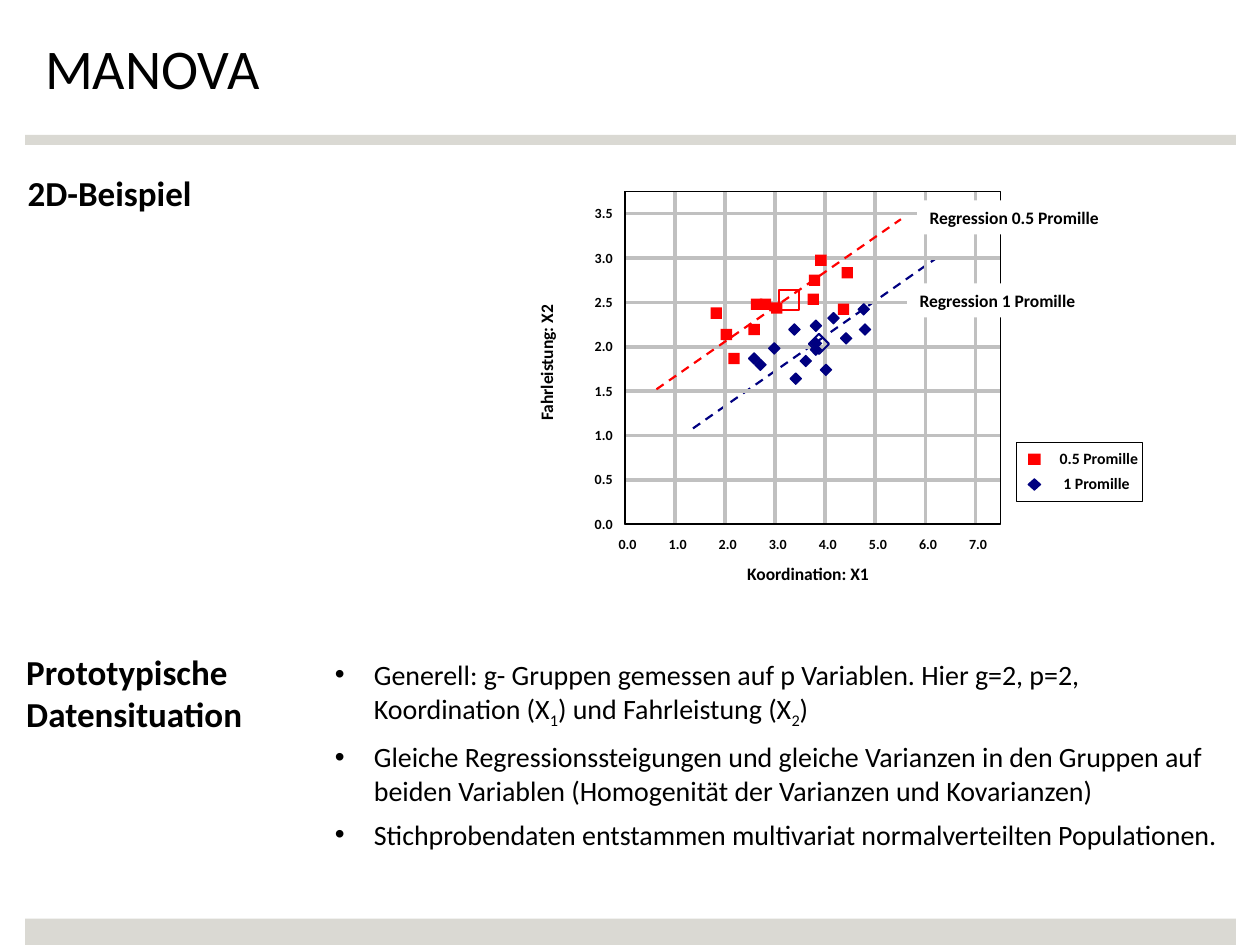
from copy import deepcopy

from lxml import etree
from pptx import Presentation
from pptx.dml.color import RGBColor
from pptx.enum.dml import MSO_LINE
from pptx.enum.shapes import MSO_CONNECTOR, MSO_SHAPE
from pptx.enum.text import PP_ALIGN
from pptx.oxml.ns import qn
from pptx.util import Inches, Pt

FONT = "Calibri"
BLACK = RGBColor(0, 0, 0)
WHITE = RGBColor(255, 255, 255)
BAND = RGBColor(0xDA, 0xD9, 0xD3)
GRID = RGBColor(0xC0, 0xC0, 0xC0)
RED = RGBColor(0xFF, 0, 0)
NAVY = RGBColor(0, 0, 0x80)

DASH = MSO_LINE.DASH
STRAIGHT = MSO_CONNECTOR.STRAIGHT
RECTANGLE = MSO_SHAPE.RECTANGLE
DIAMOND = MSO_SHAPE.DIAMOND
LEFT = PP_ALIGN.LEFT

PLOT_LEFT, PLOT_TOP, PLOT_WIDTH, PLOT_HEIGHT = 4.96, 1.52, 2.98, 2.64
PLOT_RIGHT, PLOT_BOTTOM = PLOT_LEFT + PLOT_WIDTH, PLOT_TOP + PLOT_HEIGHT
X_MAXIMUM, Y_MAXIMUM = 7.5, 3.75
MARKER = 0.09

LIGHT_DOSE = [
    (6.42, 2.18), (5.94, 2.57), (5.72, 2.61), (5.64, 2.44), (6.12, 2.4), (5.96, 2.37),
    (6.03, 2.37), (6.47, 2.02), (6.68, 2.12), (6.41, 2.33), (6.65, 2.41), (5.78, 2.8)]
HEAVY_DOSE = [
    (6.27, 2.96), (6.51, 2.89), (5.99, 2.85), (6.35, 2.82), (6.43, 2.68), (6.82, 2.57), (6.67, 2.64),
    (6.43, 2.54), (6.43, 2.73), (6.81, 2.41), (6.57, 2.48), (6.26, 2.57), (6.1, 2.72), (5.94, 2.8)]

BULLETS = [
    [("Generell: g- Gruppen gemessen auf p Variablen. Hier g=2, p=2,\nKoordination (X", False),
     ("1", True), (") und Fahrleistung (X", False), ("2", True), (")", False)],
    [("Gleiche Regressionssteigungen und gleiche Varianzen in den Gruppen auf beiden Variablen "
      "(Homogenität der Varianzen und Kovarianzen)", False)],
    [("Stichprobendaten entstammen multivariat normalverteilten Populationen.", False)],
]


def write_text(para, text, size, bold=False, subscript=False):
    """Append text to a paragraph, turning newlines into line breaks."""
    for index, line in enumerate(text.split("\n")):
        if index:
            para.add_line_break()
            para._p[-1].append(deepcopy(span._r.rPr))
        span = para.add_run()
        span.text = line
        span.font.name = FONT
        span.font.size = Pt(size)
        span.font.bold = bold
        span.font.color.rgb = BLACK
        if subscript:
            span._r.rPr.set("baseline", "-25000")


def add_text(page, area, text, size, bold=False):
    """Add a wrapping text box with one paragraph."""
    box = page.shapes.add_textbox(*map(Inches, area))
    box.text_frame.word_wrap = True
    write_text(box.text_frame.paragraphs[0], text, size, bold)


def add_plot_label(page, area, text, size, rotation=0):
    """Add a bold single-line label without margins."""
    box = page.shapes.add_textbox(*map(Inches, area))
    box.rotation = rotation
    frame = box.text_frame
    frame.word_wrap = False
    frame.margin_left = frame.margin_right = frame.margin_top = frame.margin_bottom = 0
    write_text(frame.paragraphs[0], text, size, bold=True)


def add_bullets(page, area, items, size):
    """Add a bulleted list whose items are lists of spans."""
    frame = page.shapes.add_textbox(*map(Inches, area)).text_frame
    frame.word_wrap = True
    for index, item in enumerate(items):
        para = frame.add_paragraph() if index else frame.paragraphs[0]
        if index:
            para.space_before = Pt(6)
        properties = para._p.get_or_add_pPr()
        properties.set("marL", str(Inches(0.31)))
        properties.set("indent", str(Inches(-0.31)))
        etree.SubElement(properties, qn("a:buFont")).set("typeface", "Arial")
        etree.SubElement(properties, qn("a:buChar")).set("char", "•")
        for text, subscript in item:
            write_text(para, text, size, subscript=subscript)


def paint(shape, fill=None, line=None, width=0):
    """Set the fill and outline of a shape, None meaning no paint."""
    shape.shadow.inherit = False
    if fill is None:
        shape.fill.background()
    else:
        shape.fill.solid()
        shape.fill.fore_color.rgb = fill
    if line is None:
        shape.line.fill.background()
    else:
        shape.line.color.rgb = line
        shape.line.width = Pt(width)


def add_block(page, kind, area, **look):
    """Add a painted preset shape."""
    shape = page.shapes.add_shape(kind, *map(Inches, area))
    paint(shape, **look)
    return shape


def add_line(page, ends, color, width=0, dash=None):
    """Add a straight line."""
    line = page.shapes.add_connector(STRAIGHT, *map(Inches, ends))
    line.line.color.rgb = color
    line.line.width = Pt(width)
    if dash is not None:
        line.line.dash_style = dash
    etree.SubElement(line._element.spPr, qn("a:effectLst"))


def add_line_label(page, area, text):
    """Add a white label box beside a regression line."""
    frame = add_block(page, RECTANGLE, area, fill=WHITE).text_frame
    frame.word_wrap = True
    frame.paragraphs[0].alignment = LEFT
    write_text(frame.paragraphs[0], text, 10, bold=True)


def add_square(page, left, top, size=MARKER):
    """Add a marker of the 0.5 group."""
    add_block(page, RECTANGLE, (left, top, size, MARKER), fill=RED)


def add_diamond(page, left, top, size=MARKER):
    """Add a marker of the 1.0 group."""
    add_block(page, DIAMOND, (left, top, size, MARKER), fill=NAVY, line=NAVY, width=0.63)


def add_grid(page):
    """Add grid lines, frame, axes, tick labels and axis titles."""
    for step in range(8):
        x = PLOT_LEFT + PLOT_WIDTH * step / X_MAXIMUM
        y = PLOT_BOTTOM - PLOT_HEIGHT * step / 2 / Y_MAXIMUM
        if step:
            add_line(page, (PLOT_LEFT, y, PLOT_RIGHT, y), GRID)
            add_line(page, (x, PLOT_TOP, x, PLOT_BOTTOM), GRID)
        add_plot_label(page, (4.72, y - 0.07, 0.16, 0.13), f"{step / 2:.1f}", 8)
        add_plot_label(page, (x - 0.05, 4.25, 0.16, 0.13), f"{step:.1f}", 8)
    add_block(page, RECTANGLE, (PLOT_LEFT, PLOT_TOP, PLOT_WIDTH, PLOT_HEIGHT), line=BLACK)
    outline = page.shapes.build_freeform(Inches(PLOT_LEFT), Inches(PLOT_TOP))
    corners = [(PLOT_LEFT, PLOT_BOTTOM), (PLOT_RIGHT, PLOT_BOTTOM)]
    outline.add_line_segments([tuple(map(Inches, corner)) for corner in corners], close=False)
    paint(outline.convert_to_shape(), line=BLACK)
    add_plot_label(page, (5.93, 4.47, 1.12, 0.17), "Koordination: X1", 10)
    add_plot_label(page, (3.79, 2.71, 1.09, 0.17), "Fahrleistung: X2", 10, rotation=270)


def add_legend(page):
    """Add the framed legend of both groups."""
    add_block(page, RECTANGLE, (8.07, 3.51, 1, 0.47), fill=WHITE, line=BLACK)
    add_square(page, 8.16, 3.6, size=0.1)
    add_diamond(page, 8.16, 3.8, size=0.1)
    add_plot_label(page, (8.41, 3.56, 0.68, 0.15), "0.5 Promille", 9)
    add_plot_label(page, (8.44, 3.76, 0.57, 0.15), "1 Promille", 9)


def add_scatter(page):
    """Add the scatter plot with regression lines and group centres."""
    add_line(page, (5.5, 3.4, 7.43, 2.05), NAVY, width=1.25, dash=DASH)
    add_grid(page)
    for left, top in HEAVY_DOSE:
        add_diamond(page, left, top)
    for left, top in LIGHT_DOSE:
        add_square(page, left, top)
    add_line(page, (5.21, 3.09, 7.15, 1.74), RED, width=1.25, dash=DASH)
    add_line_label(page, (7.2, 2.25, 1.58, 0.27), "Regression 1 Promille")
    add_line_label(page, (7.28, 1.59, 1.66, 0.27), "Regression 0.5 Promille")
    add_block(page, DIAMOND, (6.42, 2.65, 0.16, 0.16), line=NAVY, width=1.13)
    add_block(page, RECTANGLE, (6.18, 2.3, 0.16, 0.16), line=RED, width=1.25)


def main():
    """Build the slide and save it."""
    deck = Presentation()
    deck.slide_width, deck.slide_height = Inches(10), Inches(7.5)
    page = deck.slides.add_slide(deck.slide_layouts[6])
    add_block(page, RECTANGLE, (0.2, 1.07, 9.61, 0.08), fill=BAND)
    add_block(page, RECTANGLE, (0.2, 7.29, 9.61, 0.21), fill=BAND)
    add_legend(page)
    add_text(page, (0.12, 1.31, 2.32, 0.43), "2D-Beispiel", 20, bold=True)
    add_bullets(page, (2.56, 5.17, 7.3, 1.93), BULLETS, 16)
    add_text(page, (0.11, 5.11, 2.32, 0.77), "Prototypische\nDatensituation", 20, bold=True)
    add_text(page, (0.26, 0.22, 6.77, 0.64), "MANOVA", 32)
    add_scatter(page)
    deck.save("out.pptx")


if __name__ == "__main__":
    main()
